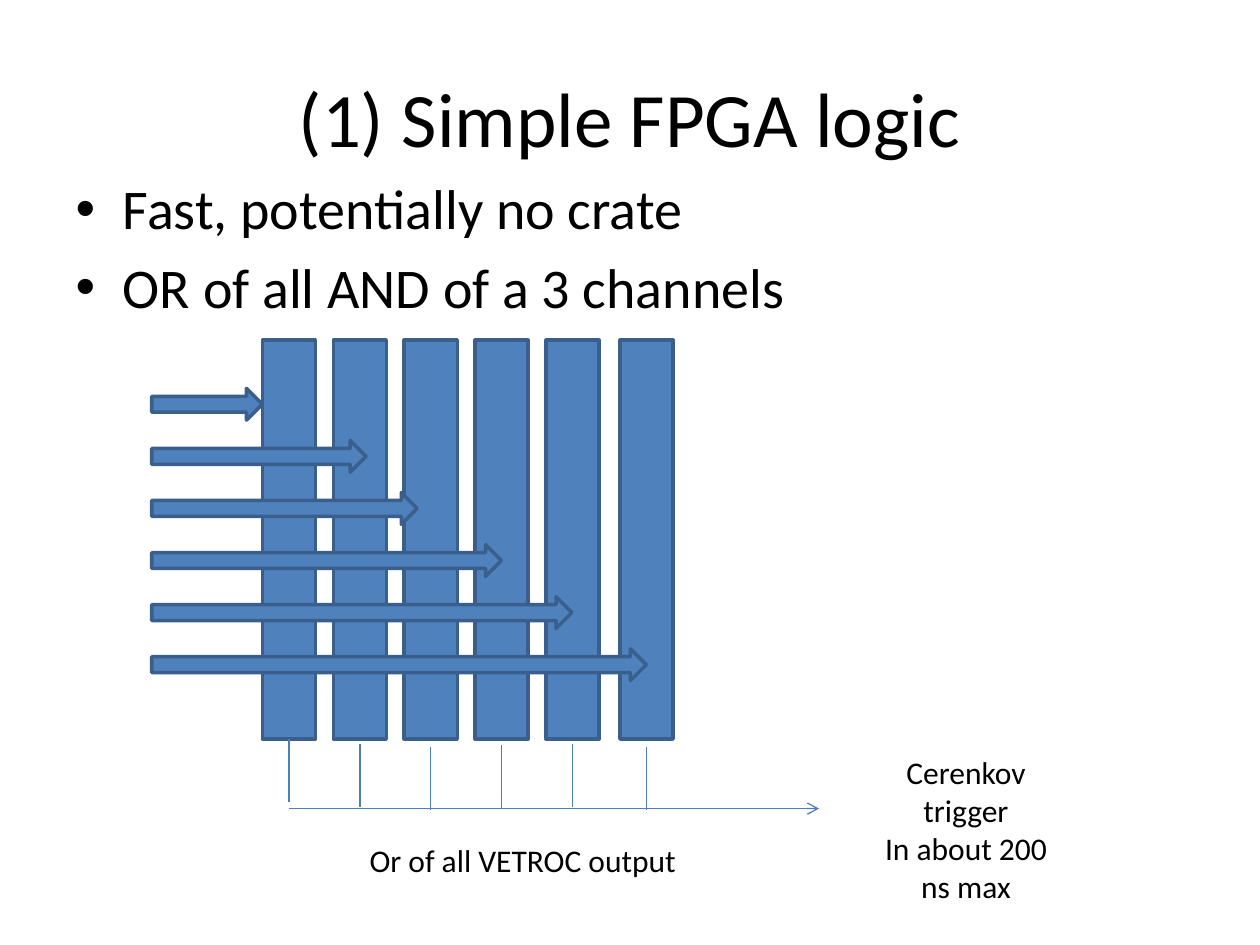
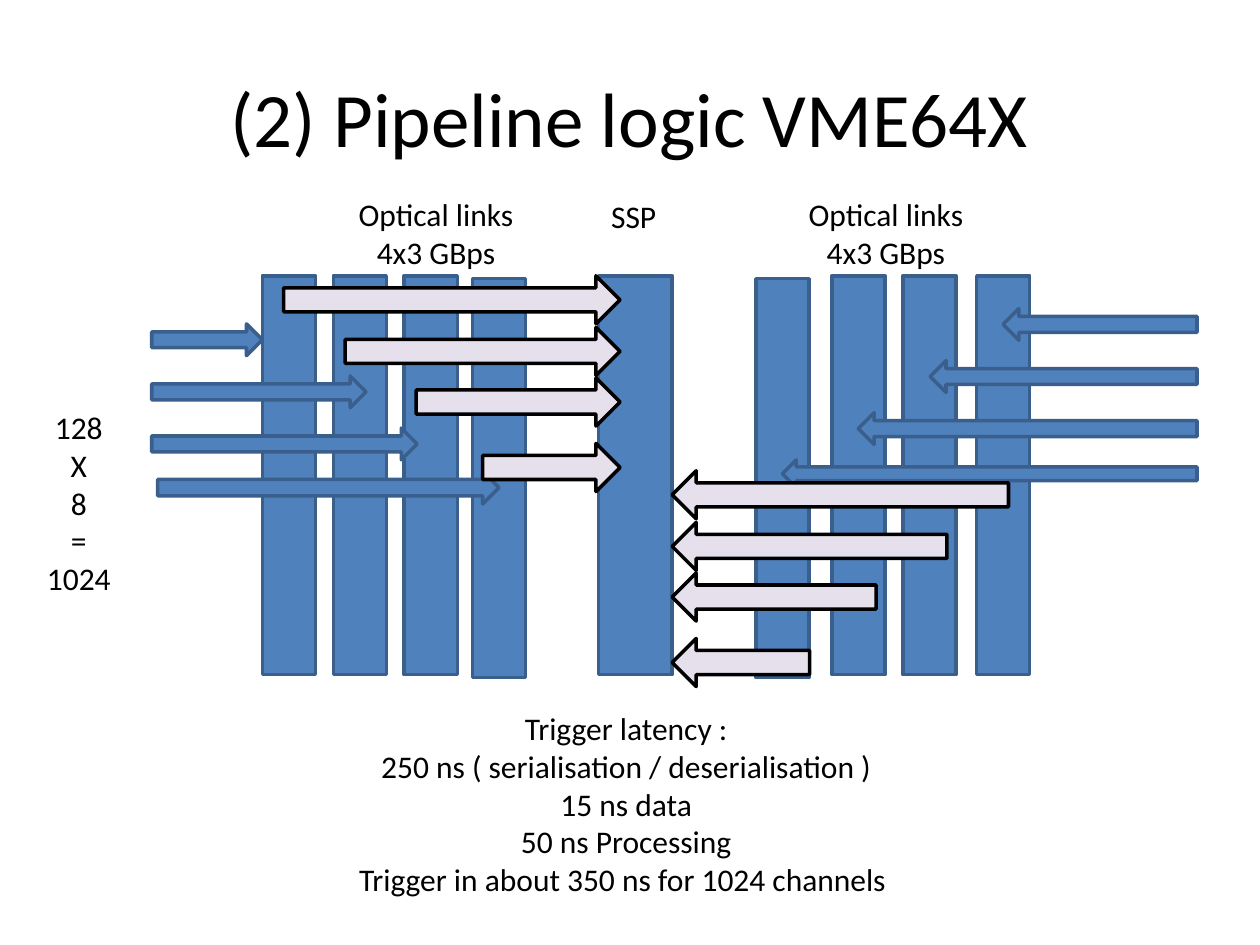
import pptx
import pptx.dml.color
import pptx.enum.shapes
import pptx.enum.text
import pptx.oxml
import pptx.oxml.ns
import pptx.util

Cm = pptx.util.Cm
Pt = pptx.util.Pt
RGB = pptx.dml.color.RGBColor
SHAPE = pptx.enum.shapes.MSO_SHAPE
LINE = pptx.enum.shapes.MSO_CONNECTOR.STRAIGHT
ALIGN = pptx.enum.text.PP_ALIGN
FIT = pptx.enum.text.MSO_AUTO_SIZE.SHAPE_TO_FIT_TEXT

BLACK = RGB(0x00, 0x00, 0x00)
BLUE = RGB(0x4F, 0x81, 0xBD)
EDGE = RGB(0x3A, 0x5F, 0x8C)
WIRE = RGB(0x4B, 0x7E, 0xBC)
LILAC = RGB(0xE6, 0xE0, 0xEC)

TITLE = {"name": "Calibri", "size": Pt(44)}
BODY = {"name": "Calibri", "size": Pt(32)}
NOTE = {"name": "Calibri", "size": Pt(18)}

BOARD = {"fill": BLUE, "edge": EDGE}
LINK = {"fill": LILAC, "edge": BLACK}

BAR_W, BAR_H = 1.07, 8.04
BAR_X, BAR_GAP = 5.29, 1.43
IN_X, IN_GAP, IN_H = 3.06, 1.05, 0.64
IN_TIPS = [5.29, 7.38, 8.41, 10.11, 11.53, 13.03]


def place(shape, box):
    for name, value in zip(("left", "top", "width", "height"), box):
        setattr(shape, name, Cm(value))


def write(frame, lines, form, align=None):
    frame.text = "\n".join(lines)
    for para in frame.paragraphs:
        if align is not None:
            para.alignment = align
        for run in para.runs:
            for name, value in form.items():
                setattr(run.font, name, value)
            run.font.color.rgb = BLACK


def start(deck, layout, title):
    """Add a slide with its title."""
    slide = deck.slides.add_slide(deck.slide_layouts[layout])
    place(slide.shapes.title, (1.27, 0.76, 22.86, 3.18))
    write(slide.shapes.title.text_frame, [title], TITLE, ALIGN.CENTER)
    return slide


def note(slide, box, lines, align=ALIGN.CENTER, wrap=False):
    text = slide.shapes.add_textbox(*map(Cm, box))
    text.text_frame.word_wrap = wrap
    text.text_frame.auto_size = FIT
    write(text.text_frame, lines, NOTE, align)


def solid(slide, kind, box, look):
    shape = slide.shapes.add_shape(kind, *map(Cm, box))
    shape.shadow.inherit = False
    shape.fill.solid()
    shape.fill.fore_color.rgb = look["fill"]
    shape.line.color.rgb = look["edge"]
    shape.line.width = Pt(2)
    return shape


def bar(slide, left, top, width=BAR_W):
    solid(slide, SHAPE.RECTANGLE, (left, top, width, BAR_H), BOARD)


def arrow(slide, tail, tip, top, height=IN_H, look=BOARD):
    """Draw a block arrow from tail to tip, either way."""
    box = (min(tail, tip), top, abs(tip - tail), height)
    shape = solid(slide, SHAPE.RIGHT_ARROW, box, look)
    if tip < tail:
        shape.rotation = 180


def wire(slide, ends, head=False):
    line = slide.shapes.add_connector(LINE, *map(Cm, ends))
    line.line.color.rgb = WIRE
    line.line.width = Pt(0.75)
    props = line._element.spPr
    if head:
        tail = pptx.oxml.parse_xml(
            f'<a:tailEnd {pptx.oxml.ns.nsdecls("a")} type="arrow"/>')
        line.line._get_or_add_ln().append(tail)
    props.append(pptx.oxml.parse_xml(
        f'<a:effectLst {pptx.oxml.ns.nsdecls("a")}/>'))


def simple(deck):
    slide = start(deck, 1, "(1) Simple FPGA logic")
    body = slide.placeholders[1]
    place(body, (1.27, 3.38, 22.86, 13.64))
    write(body.text_frame, ["Fast, potentially no crate",
                            "OR of all AND of a 3 channels"], BODY)

    lefts = [BAR_X + BAR_GAP * i for i in range(5)] + [12.5]
    for left in lefts:
        bar(slide, left, 6.86)
    for i, tip in enumerate(IN_TIPS):
        arrow(slide, IN_X, tip, 7.83 + IN_GAP * i)

    tops = [14.9, 14.99, 15.06, 15.02, 14.99, 15.06]
    for left, top in zip(lefts, tops):
        mid = left + BAR_W / 2
        wire(slide, (mid, top, mid, top + 1.27))
    wire(slide, (5.82, 16.3, 16.51, 16.3), head=True)

    note(slide, (17.57, 15.06, 3.81, 3.33),
         ["Cerenkov trigger", "In about 200 ns max"], wrap=True)
    note(slide, (7.2, 16.82, 6.76, 1.02),
         ["Or of all VETROC output"], ALIGN.LEFT)


def pipe(deck):
    slide = start(deck, 5, "(2) Pipeline logic VME64X")
    high, low = 5.56, 5.62
    for i in range(3):
        bar(slide, BAR_X + BAR_GAP * i, high)
    for left in (16.77, 18.2, 19.69):
        bar(slide, left, high)
    for left in (9.53, 15.24):
        bar(slide, left, low)
    bar(slide, 12.07, high, 1.48)

    for i, tip in enumerate(IN_TIPS[:3]):
        arrow(slide, IN_X, tip, 6.53 + IN_GAP * i)
    arrow(slide, 3.18, 10.06, 9.5, 0.66)
    for i, tip in enumerate((20.22, 18.75, 17.3)):
        arrow(slide, 24.13, tip, 6.22 + IN_GAP * i)
    arrow(slide, 24.13, 15.77, 9.27, 0.56)

    spans = [(5.56, 6.78), (6.6, 5.54), (7.62, 4.11), (8.94, 2.77)]
    for tip, side, drop in ((12.5, -1, 0), (13.55, 1, 3.93)):
        for top, span in spans:
            arrow(slide, tip + side * span, tip, top + drop, 0.97, LINK)

    note(slide, (0.69, 8.1, 1.8, 4.11), ["128", "X", "8", "=", "1024"])
    for left, height in ((6.96, 1.8), (16.03, 2.57)):
        note(slide, (left, 3.81, 3.66, height),
             ["Optical links", "4x3 GBps"])
    note(slide, (12.07, 3.84, 1.42, 1.02), ["SSP"], ALIGN.LEFT)
    note(slide, (3.81, 14.17, 17.63, 5.64),
         ["Trigger latency :",
          "250 ns ( serialisation / deserialisation )",
          "15 ns data",
          "50 ns Processing",
          "Trigger in about 350 ns for 1024 channels "], wrap=True)


def main():
    deck = pptx.Presentation()
    deck.slide_width, deck.slide_height = Cm(25.4), Cm(19.05)
    simple(deck)
    pipe(deck)
    deck.save("out.pptx")


if __name__ == "__main__":
    main()
